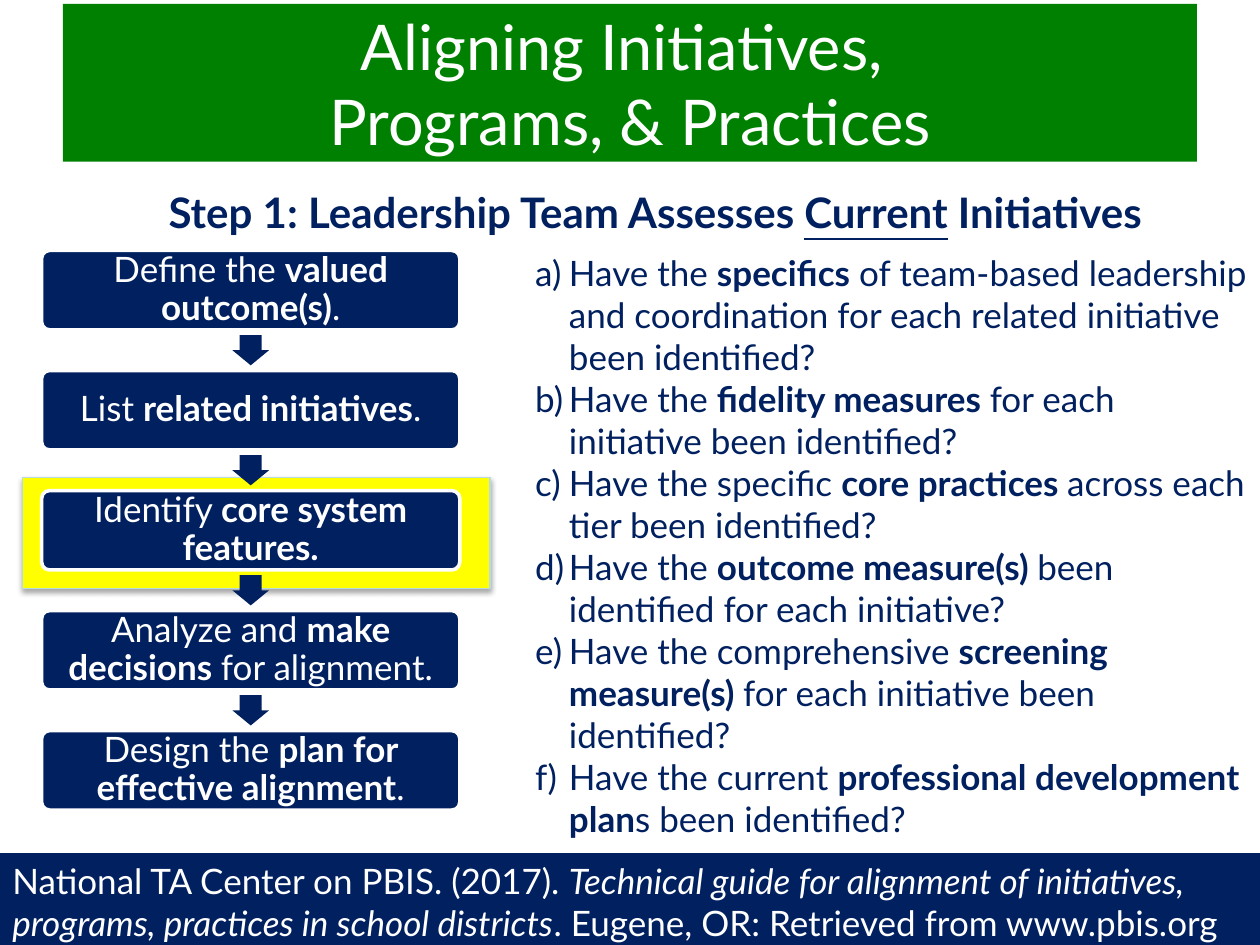
"""Build the slide on aligning initiatives, programs and practices."""
from lxml import etree
from pptx import Presentation
from pptx.dml.color import RGBColor
from pptx.enum.shapes import MSO_SHAPE
from pptx.enum.text import MSO_ANCHOR, PP_ALIGN
from pptx.oxml import parse_xml
from pptx.oxml.ns import nsdecls, qn
from pptx.util import Cm, Pt

RECTANGLE, ROUNDED = MSO_SHAPE.RECTANGLE, MSO_SHAPE.ROUNDED_RECTANGLE
DOWN_ARROW = MSO_SHAPE.DOWN_ARROW
LEFT, CENTER = PP_ALIGN.LEFT, PP_ALIGN.CENTER
TOP, MIDDLE = MSO_ANCHOR.TOP, MSO_ANCHOR.MIDDLE

FONT = "Lato"
NAVY, GREEN, YELLOW, PALE_BLUE, WHITE = "002060", "008000", "FFFF00", "B6DCDF", "FFFFFF"

TITLE = [("Aligning Initiatives, \nPrograms, & Practices", "")]
HEADING = [
    ("Step 1: Leadership Team Assesses ", "b"), ("Current", "bu"), (" Initiatives", "b"),
]
STEPS = [
    [("Define the ", ""), ("valued outcome(s)", "b"), (".", "")],
    [("List ", ""), ("related initiatives", "b"), (".", "")],
    [("Identify ", ""), ("core system features.", "b")],
    [("Analyze and ", ""), ("make decisions ", "b"), ("for alignment.", "")],
    [("Design the ", ""), ("plan for effective alignment", "b"), (".", "")],
]
QUESTIONS = [
    [("Have the ", ""), ("specifics", "b"),
     (" of team-based leadership and coordination for each related initiative been identified?", "")],
    [("Have the ", ""), ("fidelity measures ", "b"),
     ("for each initiative been identified?", "")],
    [("Have the specific ", ""), ("core practices ", "b"),
     ("across each tier been identified?", "")],
    [("Have the ", ""), ("outcome measure(s) ", "b"),
     ("been identified for each initiative?", "")],
    [("Have the comprehensive ", ""), ("screening measure(s) ", "b"),
     ("for each initiative been identified?", "")],
    [("Have the current ", ""), ("professional development plan", "b"),
     ("s been identified?", "")],
]
SOURCE = [
    ("National TA Center on PBIS. (2017). ", ""),
    ("Technical guide for alignment of initiatives, programs, practices in school districts", "i"),
    (". Eugene, OR: Retrieved from www.pbis.org", ""),
]

STEP_LEFT, STEP_TOP, STEP_WIDTH, STEP_HEIGHT, STEP_PITCH = 0.84, 5.05, 8.43, 1.6, 2.42
ARROW_WIDTH, ARROW_HEIGHT = 0.74, 0.61
INDENT = Cm(0.68)


def color(value):
    return RGBColor.from_string(value)


def add_block(slide, kind, box, fill, line=None, line_width=1):
    shape = slide.shapes.add_shape(kind, *map(Cm, box))
    shape.shadow.inherit = False
    shape.fill.solid()
    shape.fill.fore_color.rgb = color(fill)
    if line:
        shape.line.color.rgb = color(line)
        shape.line.width = Pt(line_width)
    else:
        shape.line.fill.background()
    return shape


def add_textbox(slide, box):
    return slide.shapes.add_textbox(*map(Cm, box))


def add_letter(paragraph):
    properties = paragraph._p.get_or_add_pPr()
    properties.set("marL", str(INDENT))
    properties.set("indent", str(-INDENT))
    numbering = etree.SubElement(properties, qn("a:buAutoNum"))
    numbering.set("type", "alphaLcParenR")


def write(shape, paragraphs, size=20, fill=WHITE, align=LEFT, anchor=TOP,
          spacing=None, margin=None, lettered=False):
    frame = shape.text_frame
    frame.word_wrap = True
    frame.vertical_anchor = anchor
    if margin is not None:
        frame.margin_left = frame.margin_right = Cm(margin)
        frame.margin_top = frame.margin_bottom = Cm(margin)
    for index, runs in enumerate(paragraphs):
        paragraph = frame.add_paragraph() if index else frame.paragraphs[0]
        paragraph.alignment = align
        if spacing:
            paragraph.line_spacing = spacing
        if lettered:
            add_letter(paragraph)
        for text, style in runs:
            for number, line in enumerate(text.split("\n")):
                if number:
                    paragraph.add_line_break()
                run = paragraph.add_run()
                run.text = line
                run.font.name = FONT
                run.font.size = Pt(size)
                run.font.color.rgb = color(fill)
                run.font.bold = "b" in style
                run.font.italic = "i" in style
                run.font.underline = "u" in style


def add_shadow(shape):
    effects = shape._element.spPr.find(qn("a:effectLst"))
    effects.append(parse_xml(
        f'<a:outerShdw {nsdecls("a")} blurRad="{Pt(3.1)}" dist="{Pt(1.8)}" dir="5400000" '
        'rotWithShape="0"><a:srgbClr val="000000"><a:alpha val="35000"/></a:srgbClr>'
        '</a:outerShdw>'))


def add_steps(slide):
    arrow_left = STEP_LEFT + (STEP_WIDTH - ARROW_WIDTH) / 2
    arrow_offset = (STEP_HEIGHT + STEP_PITCH - ARROW_HEIGHT) / 2
    for index, runs in enumerate(STEPS):
        top = STEP_TOP + index * STEP_PITCH
        step = add_block(slide, ROUNDED, (STEP_LEFT, top, STEP_WIDTH, STEP_HEIGHT),
                         NAVY, WHITE, 2)
        step.adjustments[0] = 0.1
        write(step, [runs], align=CENTER, anchor=MIDDLE, spacing=0.9, margin=0.2)
        if index < len(STEPS) - 1:
            arrow = add_block(slide, DOWN_ARROW,
                              (arrow_left, top + arrow_offset, ARROW_WIDTH, ARROW_HEIGHT), NAVY)
            arrow.adjustments[0] = 0.6
            arrow.adjustments[1] = 0.5


def main():
    presentation = Presentation()
    presentation.slide_width, presentation.slide_height = Cm(25.4), Cm(19.05)
    slide = presentation.slides.add_slide(presentation.slide_layouts[6])

    highlight = add_block(slide, RECTANGLE, (0.46, 9.63, 9.42, 2.24), YELLOW, PALE_BLUE, 0.75)
    add_shadow(highlight)
    title = add_block(slide, RECTANGLE, (1.27, 0.08, 22.86, 3.18), GREEN)
    write(title, [TITLE], size=36, align=CENTER, anchor=MIDDLE)
    footer = add_block(slide, RECTANGLE, (0, 17.2, 25.4, 1.96), NAVY)
    write(footer, [SOURCE])
    add_steps(slide)
    heading = add_textbox(slide, (3.15, 3.63, 20.98, 1.32))
    write(heading, [HEADING], size=24, fill=NAVY)
    questions = add_textbox(slide, (10.54, 4.95, 14.86, 11.38))
    write(questions, QUESTIONS, fill=NAVY, lettered=True)

    presentation.save("out.pptx")


if __name__ == "__main__":
    main()
